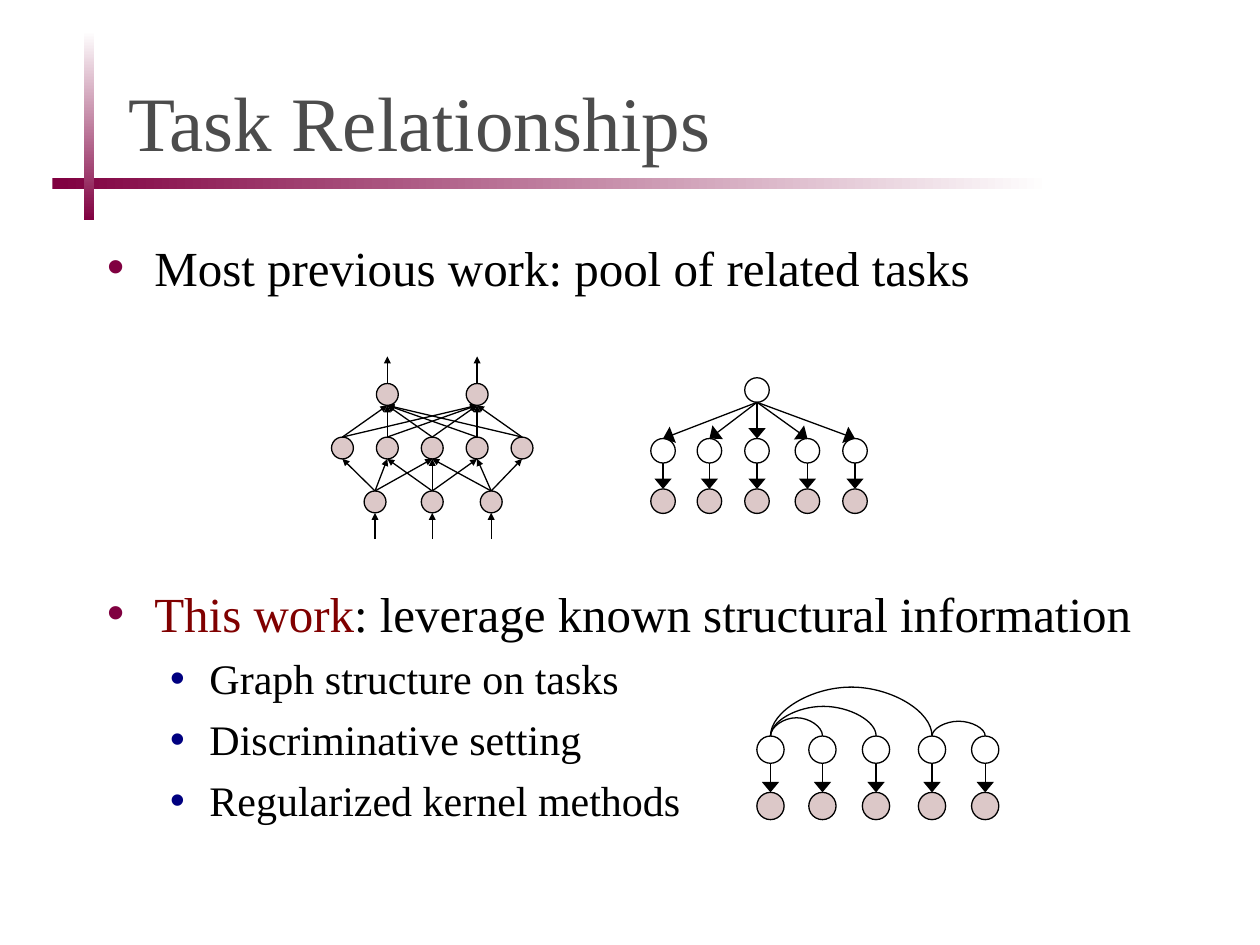
from dataclasses import dataclass

from lxml import etree
from pptx import Presentation
from pptx import util as u
from pptx.dml import color as c
from pptx.enum import shapes, text
from pptx.oxml import ns


@dataclass(frozen=True)
class Theme:
    font: str = "Times New Roman"
    title_size: float = 44
    item_sizes: tuple = (28, 24)
    title: str = "4C4C4C"
    ink: str = "000000"
    paper: str = "FFFFFF"
    accent: str = "800040"
    emphasis: str = "800000"
    node: str = "DCC8C8"
    bullets: tuple = ("800040", "000080")
    line: float = 0.75


THEME = Theme()
INDENTS = ((27, -27), (58.5, -22.5))


def rgb(value):
    return c.RGBColor.from_string(value)


def add_child(parent, tag, **attributes):
    return etree.SubElement(parent, ns.qn(tag), attributes)


def set_font(font, size, color):
    font.name = THEME.font
    font.size = u.Pt(size)
    font.color.rgb = rgb(color)


def place(shape, left, top, width, height):
    shape.left, shape.top = u.Pt(left), u.Pt(top)
    shape.width, shape.height = u.Pt(width), u.Pt(height)


def add_bar(page, bounds, colors, angle):
    bar = page.shapes.add_shape(shapes.MSO_SHAPE.RECTANGLE, *map(u.Pt, bounds))
    bar.shadow.inherit = False
    bar.line.fill.background()
    bar.fill.gradient()
    bar.fill.gradient_angle = angle
    for stop, color in zip(bar.fill.gradient_stops, colors):
        stop.color.rgb = rgb(color)


def fill_title(page, words):
    title = page.shapes.title
    place(title, 66, 24, 639, 90)
    frame = title.text_frame
    frame.text = words
    frame.auto_size = text.MSO_AUTO_SIZE.NONE
    frame.vertical_anchor = text.MSO_ANCHOR.MIDDLE
    para = frame.paragraphs[0]
    para.alignment = text.PP_ALIGN.LEFT
    set_font(para.font, THEME.title_size, THEME.title)


def add_item(para, level, gap, spans):
    para.level = level
    margin, indent = INDENTS[level]
    properties = para._p.get_or_add_pPr()
    properties.set("marL", str(u.Pt(margin)))
    properties.set("indent", str(u.Pt(indent)))
    bullet_color = add_child(properties, "a:buClr")
    add_child(bullet_color, "a:srgbClr", val=THEME.bullets[level])
    add_child(properties, "a:buChar", char="•")
    para.space_before = u.Pt(gap)
    set_font(para.font, THEME.item_sizes[level], THEME.ink)
    for words, color in spans:
        span = para.add_run()
        span.text = words
        if color != THEME.ink:
            span.font.color.rgb = rgb(color)


def fill_body(page, items):
    body = page.placeholders[1]
    place(body, 54, 132, 612, 343.5)
    frame = body.text_frame
    frame.auto_size = text.MSO_AUTO_SIZE.NONE
    for index, item in enumerate(items):
        para = frame.add_paragraph() if index else frame.paragraphs[0]
        add_item(para, *item)


def add_node(group, x, y, size, filled=True):
    bounds = (x - size / 2, y - size / 2, size, size)
    node = group.shapes.add_shape(shapes.MSO_SHAPE.OVAL, *map(u.Pt, bounds))
    node.shadow.inherit = False
    if filled:
        node.fill.solid()
        node.fill.fore_color.rgb = rgb(THEME.node)
    else:
        node.fill.background()
    node.line.color.rgb = rgb(THEME.ink)
    node.line.width = u.Pt(THEME.line)
    return node


def add_row(group, xs, y, size, filled=True):
    return [add_node(group, x, y, size, filled) for x in xs]


def top_of(node):
    return node.left + node.width // 2, node.top


def bottom_of(node):
    return node.left + node.width // 2, node.top + node.height


def shifted(point, distance):
    return point[0], point[1] + u.Pt(distance)


def add_line(group, kind, start, end):
    line = group.shapes.add_connector(kind, *start, *end)
    line.line.color.rgb = rgb(THEME.ink)
    line.line.width = u.Pt(THEME.line)
    add_child(line._element.spPr, "a:effectLst")
    return line


def add_arrow(group, start, end, width="lg", length="med"):
    arrow = add_line(group, shapes.MSO_CONNECTOR.STRAIGHT, start, end)
    outline = arrow._element.spPr.find(ns.qn("a:ln"))
    add_child(outline, "a:tailEnd", type="triangle", w=width, len=length)


def add_arch(group, first, last, rise):
    start, end = top_of(first), top_of(last)
    arch = add_line(group, shapes.MSO_CONNECTOR.CURVE, start, end)
    arch.begin_connect(first, 0)
    arch.end_connect(last, 0)
    length, thickness = end[0] - start[0], u.Pt(0.17)
    arch.left = (start[0] + end[0] - thickness) // 2
    arch.top = start[1] - length // 2
    arch.width, arch.height = thickness, length
    properties = arch._element.spPr
    frame = properties.find(ns.qn("a:xfrm"))
    for name, value in (("rot", "5400000"), ("flipH", "1"), ("flipV", "1")):
        frame.set(name, value)
    guides = properties.find(ns.qn("a:prstGeom")).get_or_add_avLst()
    ratio = round(u.Pt(rise) / thickness * 100000)
    add_child(guides, "a:gd", name="adj1", fmla=f"val {ratio}")


def add_network(page):
    group = page.shapes.add_group_shape()
    hidden_xs = [195.7 + 25.65 * i for i in range(5)]
    hidden = add_row(group, hidden_xs, 256, 12.5)
    inputs = add_row(group, (214.3, 247, 280.7), 286.8, 12.5)
    outputs = add_row(group, (hidden_xs[1], hidden_xs[3]), 225.4, 12.5)
    links = [(bottom_of(node), shifted(bottom_of(node), 15)) for node in inputs]
    links = [(end, start) for start, end in links]
    for index, source in enumerate(inputs):
        links += [(top_of(source), bottom_of(node)) for node in hidden[index:index + 3]]
    for target in outputs:
        links += [(top_of(node), bottom_of(target)) for node in hidden]
        links.append((top_of(target), shifted(top_of(target), -15.5)))
    for start, end in links:
        add_arrow(group, start, end, "sm", "sm")


def add_pairs(group, xs, task_y, data_y, size):
    tasks = add_row(group, xs, task_y, size, filled=False)
    for task, data in zip(tasks, add_row(group, xs, data_y, size)):
        add_arrow(group, bottom_of(task), top_of(data))
    return tasks


def add_tree(page):
    group = page.shapes.add_group_shape()
    xs = (378.9, 405.4, 432.6, 461.4, 488.6)
    root = add_node(group, xs[2], 222.9, 14, filled=False)
    for task in add_pairs(group, xs, 257.6, 286.4, 14):
        add_arrow(group, bottom_of(root), top_of(task))


def add_task_graph(page):
    group = page.shapes.add_group_shape()
    xs = (440.3, 470, 500.6, 532.6, 563)
    tasks = add_pairs(group, xs, 428.4, 460.6, 15.6)
    for first, last, rise in ((0, 1, 10.5), (0, 3, 28), (3, 4, 8.5), (0, 2, 17)):
        add_arch(group, tasks[first], tasks[last], rise)


def main():
    deck = Presentation()
    deck.slide_width, deck.slide_height = u.Pt(720), u.Pt(540)
    page = deck.slides.add_slide(deck.slide_layouts[1])
    add_bar(page, (30, 102, 570, 6), (THEME.accent, THEME.paper), 0)
    add_bar(page, (48, 18, 6, 108), (THEME.paper, THEME.accent), 270)
    fill_title(page, "Task Relationships")
    fill_body(page, [
        (0, 4, [("Most previous work: pool of related tasks", THEME.ink)]),
        (0, 164, [("This work", THEME.emphasis),
                  (": leverage known structural information", THEME.ink)]),
        (1, 6, [("Graph structure on tasks", THEME.ink)]),
        (1, 6, [("Discriminative setting", THEME.ink)]),
        (1, 6, [("Regularized kernel methods", THEME.ink)]),
    ])
    add_network(page)
    add_tree(page)
    add_task_graph(page)
    deck.save("out.pptx")


if __name__ == "__main__":
    main()
